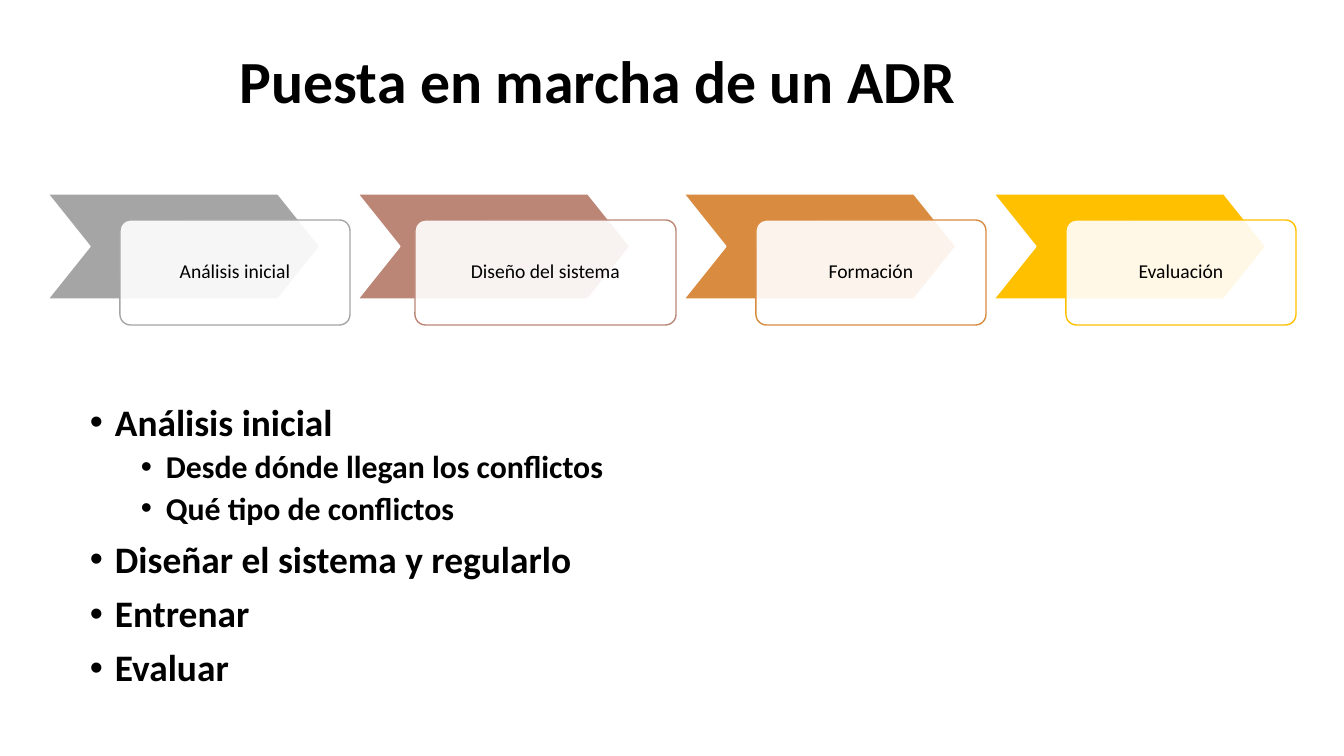
import pptx
import pptx.util
import pptx.dml.color
import pptx.enum.shapes
import pptx.enum.text
import pptx.oxml.ns
import lxml.etree

EMU_PER_PX = 12192000 / 1344
FONT = "Calibri"
COLORS = {
    "text": "000000",
    "paper": "FFFFFF",
    "analysis": "A5A5A5",
    "design": "BB8676",
    "training": "D98B3F",
    "evaluation": "FFC000",
}
# label, colour, extra card width
STAGES = [
    ("Análisis inicial", "analysis", 0),
    ("Diseño del sistema", "design", 31),
    ("Formación", "training", 0),
    ("Evaluación", "evaluation", 0),
]
# text, outline level
STEPS = [
    ("Análisis inicial", 0),
    ("Desde dónde llegan los conflictos", 1),
    ("Qué tipo de conflictos", 1),
    ("Diseñar el sistema y regularlo", 0),
    ("Entrenar", 0),
    ("Evaluar", 0),
]
# size, space before, left margin by outline level
LEVELS = [(26.7, 10, 25), (22.7, 5, 76)]
ALIGN = pptx.enum.text.PP_ALIGN
ANCHOR = pptx.enum.text.MSO_ANCHOR
SHAPES = pptx.enum.shapes.MSO_SHAPE


def px(length):
    return pptx.util.Emu(round(length * EMU_PER_PX))


def color(name):
    return pptx.dml.color.RGBColor.from_string(COLORS[name])


def style(paragraph, size, bold=False):
    paragraph.line_spacing = 0.9
    for run in paragraph.runs:
        run.font.name = FONT
        run.font.size = pptx.util.Pt(size)
        run.font.bold = bold
        run.font.color.rgb = color("text")


def add_text_frame(slide, box):
    frame = slide.shapes.add_textbox(*map(px, box)).text_frame
    frame.word_wrap = True
    return frame


def add_panel(slide, kind, box, adjustment, fill, line):
    panel = slide.shapes.add_shape(kind, *map(px, box))
    panel.shadow.inherit = False
    panel.adjustments[0] = adjustment
    panel.fill.solid()
    panel.fill.fore_color.rgb = color(fill)
    panel.line.color.rgb = color(line)
    panel.line.width = pptx.util.Pt(1)
    return panel


def add_title(slide, box):
    frame = add_text_frame(slide, box)
    frame.vertical_anchor = ANCHOR.MIDDLE
    frame.text = "Puesta en marcha de un ADR"
    style(frame.paragraphs[0], 42.7, bold=True)


def add_process(slide, box):
    left, top, _, height = box
    panel_height = height - 26
    for label, hue, extra in STAGES:
        add_panel(slide, SHAPES.CHEVRON, (left, top, 272, panel_height), 0.4, hue, "paper")

        # Translucent card over the arrow, lower and to the right
        card_left = left + 72 - extra // 2
        card_width = 230 + extra
        card = add_panel(slide, SHAPES.ROUNDED_RECTANGLE,
                         (card_left, top + 26, card_width, panel_height), 0.1, "paper", hue)
        fill_color = card.fill._xPr.find(".//" + pptx.oxml.ns.qn("a:srgbClr"))
        lxml.etree.SubElement(fill_color, pptx.oxml.ns.qn("a:alpha"), val="90000")

        frame = card.text_frame
        frame.word_wrap = True
        frame.vertical_anchor = ANCHOR.MIDDLE
        frame.margin_left = frame.margin_right = px(14)
        frame.text = label
        frame.paragraphs[0].alignment = ALIGN.CENTER
        style(frame.paragraphs[0], 14)
        left = card_left + card_width + 8


def add_steps(slide, box):
    frame = add_text_frame(slide, box)
    for index, (text, level) in enumerate(STEPS):
        paragraph = frame.add_paragraph() if index else frame.paragraphs[0]
        paragraph.text = text
        paragraph.level = level
        paragraph.alignment = ALIGN.JUSTIFY
        size, space, margin = LEVELS[level]
        paragraph.space_before = pptx.util.Pt(space if index else 0)

        # Hanging bullet
        properties = paragraph._p.get_or_add_pPr()
        properties.set("marL", str(px(margin)))
        properties.set("indent", str(px(-25)))
        lxml.etree.SubElement(properties, pptx.oxml.ns.qn("a:buFont"), typeface="Arial")
        lxml.etree.SubElement(properties, pptx.oxml.ns.qn("a:buChar"), char="•")
        style(paragraph, size, bold=True)


def main():
    deck = pptx.Presentation()
    deck.slide_width, deck.slide_height = px(1344), px(756)
    slide = deck.slides.add_slide(deck.slide_layouts[6])
    add_title(slide, (230, 21, 876, 126))
    add_process(slide, (48, 194, 1248, 131))
    add_steps(slide, (80, 399, 1210, 169))
    deck.save("out.pptx")


if __name__ == "__main__":
    main()
